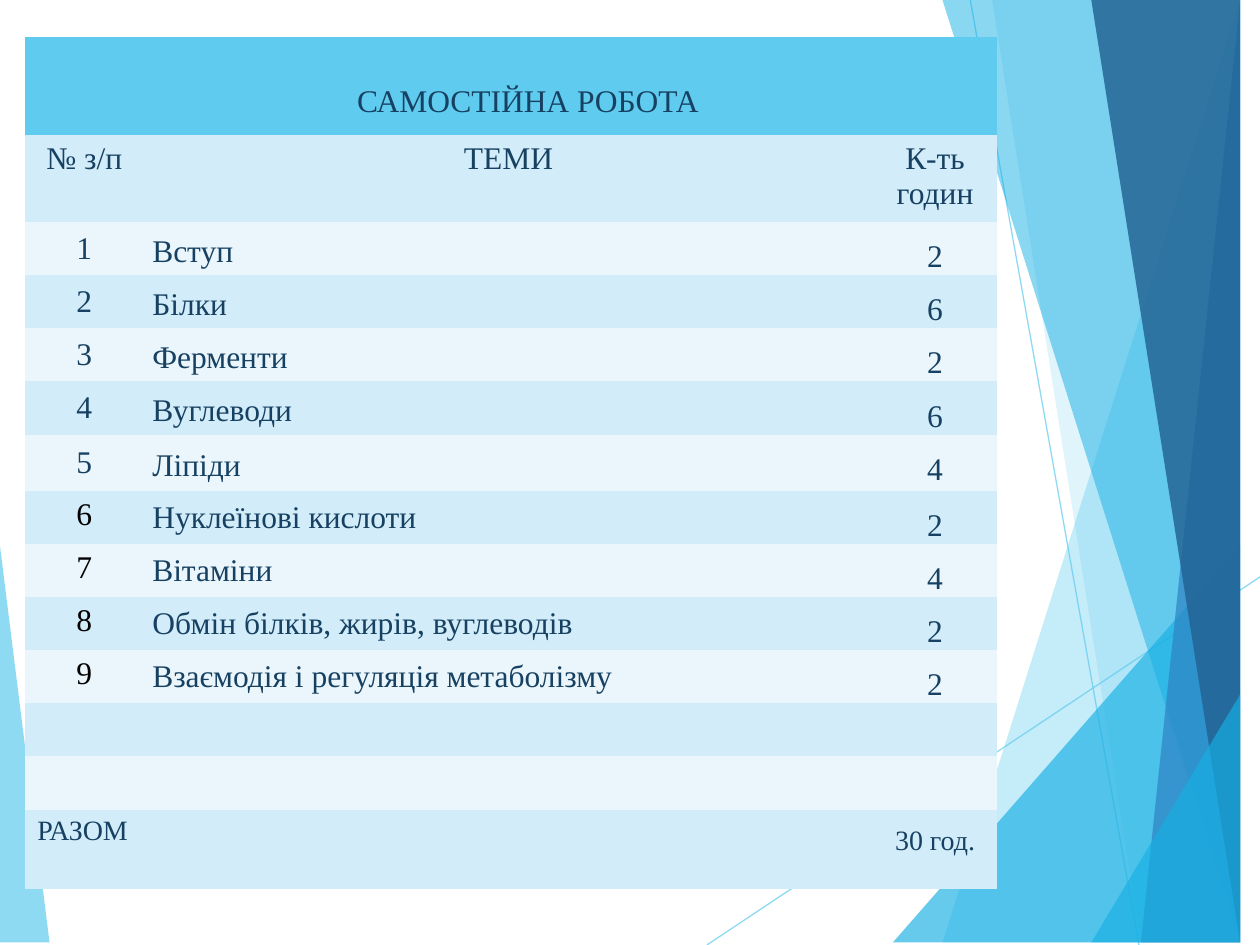
import lxml.etree
import pptx
import pptx.dml.color
import pptx.enum.shapes
import pptx.enum.text
import pptx.oxml.ns
import pptx.util

Cm = pptx.util.Cm
Pt = pptx.util.Pt
RGBColor = pptx.dml.color.RGBColor
CENTER = pptx.enum.text.PP_ALIGN.CENTER
LEFT = pptx.enum.text.PP_ALIGN.LEFT
TOP_ANCHOR = pptx.enum.text.MSO_ANCHOR.TOP
MIDDLE_ANCHOR = pptx.enum.text.MSO_ANCHOR.MIDDLE

FONT = "Times New Roman"
TEXT = RGBColor(0x17, 0x41, 0x62)
BLACK = RGBColor(0, 0, 0)
SKY = RGBColor(0x5F, 0xCB, 0xEF)
CYAN = RGBColor(0x17, 0xB0, 0xE4)
BLUE = RGBColor(0x2E, 0x83, 0xC3)
NAVY = RGBColor(0x22, 0x62, 0x92)
DARK_BAND = RGBColor(0xD2, 0xEC, 0xF9)
LIGHT_BAND = RGBColor(0xEA, 0xF6, 0xFC)

WIDTH, HEIGHT = 25.4, 19.05
EDGE, TOP = 25.43, -0.03
PLAIN_TABLE_STYLE = "{2D5ABB26-0587-4C30-8999-92F81FD0307C}"

LEFT_PANEL = [(-0.03, 11.15), (1.24, 19.08), (-0.03, HEIGHT)]
RIGHT_PANELS = [
    ([(24.77, 0), (19.15, HEIGHT), (EDGE, HEIGHT), (EDGE, 0)], SKY, 36),
    ([(20.02, TOP), (23.34, HEIGHT), (EDGE, HEIGHT), (EDGE, TOP)], SKY, 20),
    ([(18.44, HEIGHT), (EDGE, 10.9), (EDGE, HEIGHT)], CYAN, 66),
    ([(19.48, TOP), (24.64, HEIGHT), (EDGE, HEIGHT), (EDGE, TOP)], CYAN, 50),
    ([(24.92, TOP), (23.04, HEIGHT), (EDGE, HEIGHT), (EDGE, TOP)], BLUE, 70),
    ([(22.48, TOP), (25.1, HEIGHT), (EDGE, HEIGHT), (EDGE, TOP)], NAVY, 82),
    ([(22.4, HEIGHT), (EDGE, 13.59), (EDGE, HEIGHT)], CYAN, 66),
]
THIN_LINES = [((14.25, HEIGHT), (EDGE, 11.61)), ((19.56, 0), (22.96, HEIGHT))]

HEADINGS = ["№ з/п", "ТЕМИ", "К-ть годин"]
TOPICS = [
    ("Вступ", 2),
    ("Білки", 6),
    ("Ферменти", 2),
    ("Вуглеводи", 6),
    ("Ліпіди", 4),
    ("Нуклеїнові кислоти", 2),
    ("Вітаміни", 4),
    ("Обмін білків, жирів, вуглеводів", 2),
    ("Взаємодія і регуляція метаболізму", 2),
]
COLUMN_WIDTHS = [2.4, 14.7, 2.5]
ROW_HEIGHTS = [1.98, 1.75] + [1.07] * 4 + [1.14] + [1.07] * 6 + [1.6]


def set_opacity(shape_properties, percent):
    for color in shape_properties.iter(pptx.oxml.ns.qn("a:srgbClr")):
        alpha = lxml.etree.SubElement(color, pptx.oxml.ns.qn("a:alpha"))
        alpha.set("val", str(percent * 1000))


def add_panel(slide, points, color, opacity):
    (left, top), *others = points
    builder = slide.shapes.build_freeform(left, top, scale=Cm(1))
    builder.add_line_segments(others, close=True)
    shape = builder.convert_to_shape()
    shape.shadow.inherit = False
    shape.fill.solid()
    shape.fill.fore_color.rgb = color
    shape.line.fill.background()
    set_opacity(shape.fill._xPr, opacity)


def add_thin_line(slide, start, end):
    connector = slide.shapes.add_connector(
        pptx.enum.shapes.MSO_CONNECTOR.STRAIGHT,
        *(Cm(value) for value in start + end))
    connector.line.color.rgb = SKY
    connector.line.width = Pt(0.75)
    properties = connector._element.spPr
    set_opacity(properties, 70)
    lxml.etree.SubElement(properties, pptx.oxml.ns.qn("a:effectLst"))


def write_text(paragraph, text, size=18, color=TEXT, alignment=CENTER):
    paragraph.alignment = alignment
    run = paragraph.add_run()
    run.text = text
    run.font.name = FONT
    run.font.size = Pt(size)
    run.font.bold = False
    run.font.color.rgb = color


def write_cell(cell, text, anchor=TOP_ANCHOR, spacing=None, narrow=False, **style):
    """Fill a table cell; narrow cells have no vertical margins."""
    cell.vertical_anchor = anchor
    if narrow:
        cell.margin_left = cell.margin_right = Cm(0.17)
        cell.margin_top = cell.margin_bottom = 0
    paragraph = cell.text_frame.paragraphs[0]
    if spacing:
        paragraph.line_spacing = spacing
    write_text(paragraph, text, **style)


def add_empty_table(slide):
    frame = slide.shapes.add_table(
        len(ROW_HEIGHTS), len(COLUMN_WIDTHS), Cm(0.5), Cm(0.75),
        Cm(sum(COLUMN_WIDTHS)), Cm(sum(ROW_HEIGHTS)))
    table = frame.table
    table.first_row = table.horz_banding = False
    table._tbl.tblPr.find(pptx.oxml.ns.qn("a:tableStyleId")).text = PLAIN_TABLE_STYLE
    for column, width in zip(table.columns, COLUMN_WIDTHS):
        column.width = Cm(width)
    for index, (row, height) in enumerate(zip(table.rows, ROW_HEIGHTS)):
        row.height = Cm(height)
        band = DARK_BAND if index % 2 else LIGHT_BAND
        for cell in row.cells:
            cell.fill.solid()
            cell.fill.fore_color.rgb = band if index else SKY
    table.cell(0, 0).merge(table.cell(0, len(COLUMN_WIDTHS) - 1))
    return table


def add_hours_table(slide):
    table = add_empty_table(slide)
    for column, heading in enumerate(HEADINGS):
        write_cell(table.cell(1, column), heading)
    for number, (topic, hours) in enumerate(TOPICS, start=1):
        number_cell, topic_cell, hours_cell = table.rows[number + 1].cells
        early = number <= 5
        write_cell(number_cell, str(number),
                   anchor=MIDDLE_ANCHOR if early else TOP_ANCHOR,
                   color=TEXT if early else BLACK)
        write_cell(topic_cell, topic, anchor=MIDDLE_ANCHOR, narrow=True,
                   spacing=1.15 if early else None, alignment=LEFT)
        if early:
            topic_cell.text_frame.paragraphs[0].space_after = Pt(10)
        write_cell(hours_cell, str(hours), narrow=True, spacing=1.5)
    last = len(ROW_HEIGHTS) - 1
    write_cell(table.cell(last, 0), "РАЗОМ", size=16, alignment=LEFT)
    write_cell(table.cell(last, 2), "30 год.", size=16, narrow=True, spacing=1.5)


def place_title(slide, text):
    title = slide.shapes.title
    title.left, title.top = Cm(4.27), Cm(1.5)
    title.width, title.height = Cm(12.75), Cm(1.02)
    title.text_frame.word_wrap = True
    title.text_frame.auto_size = pptx.enum.text.MSO_AUTO_SIZE.NONE
    title.text_frame.vertical_anchor = TOP_ANCHOR
    write_text(title.text_frame.paragraphs[0], text)
    # The title lies over the top row of the table.
    slide.shapes._spTree.append(title._element)


def main():
    presentation = pptx.Presentation()
    presentation.slide_width, presentation.slide_height = Cm(WIDTH), Cm(HEIGHT)
    slide = presentation.slides.add_slide(presentation.slide_layouts[5])
    add_panel(slide, LEFT_PANEL, SKY, 70)
    for start, end in THIN_LINES:
        add_thin_line(slide, start, end)
    for points, color, opacity in RIGHT_PANELS:
        add_panel(slide, points, color, opacity)
    add_hours_table(slide)
    place_title(slide, "САМОСТІЙНА РОБОТА")
    presentation.save("out.pptx")


if __name__ == "__main__":
    main()
